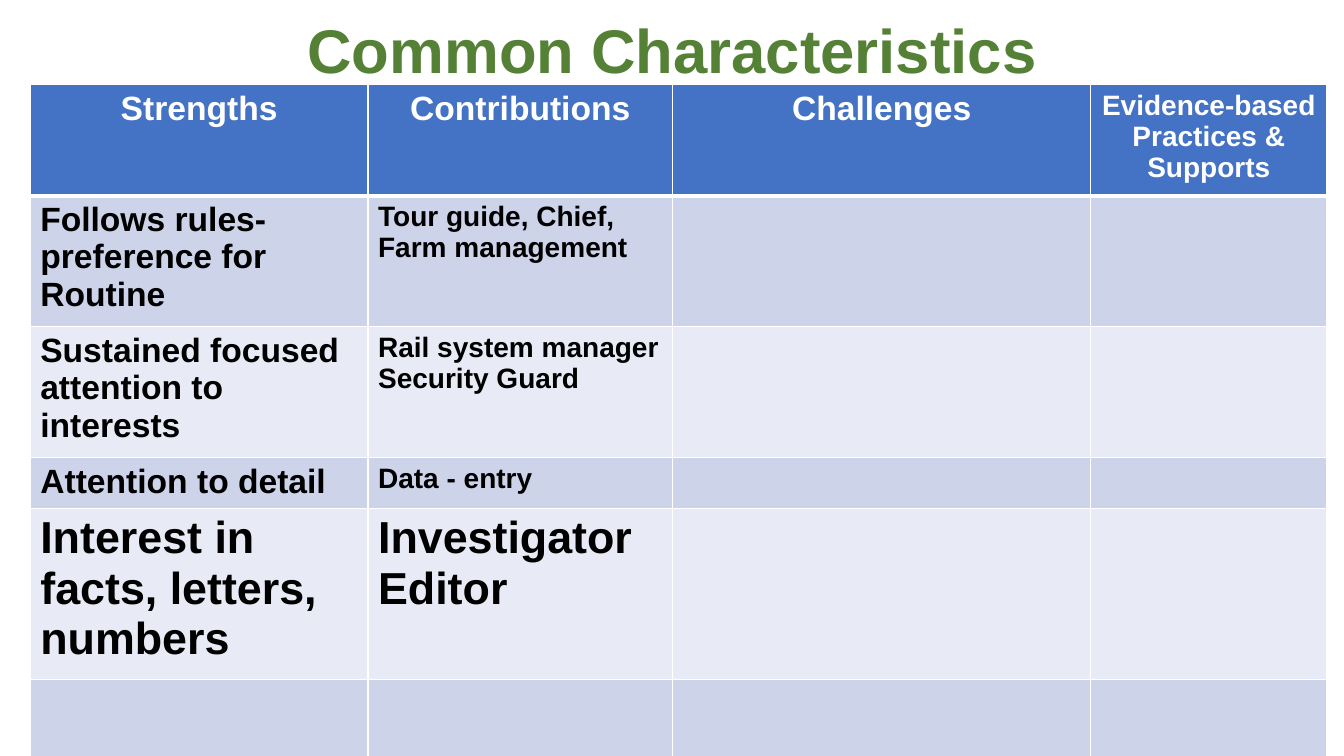
"""Build the Common Characteristics table slide."""
from lxml.etree import SubElement
from pptx import Presentation
from pptx.dml.color import RGBColor
from pptx.enum.text import MSO_ANCHOR, PP_ALIGN
from pptx.oxml.ns import qn
from pptx.util import Inches, Pt

TITLE = "Common Characteristics"
ROWS = [
    ("Strengths", "Contributions", "Challenges", "Evidence-based Practices & Supports"),
    ("Follows rules- preference for Routine", "Tour guide, Chief, Farm management", "", ""),
    ("Sustained focused attention to interests", "Rail system manager\nSecurity Guard", "", ""),
    ("Attention to detail", "Data - entry", "", ""),
    ("Interest in facts, letters, numbers", "Investigator\nEditor", "", ""),
    ("", "", "", ""),
    ("", "", "", ""),
]
SIZES = [(24, 24, 24, 20)] + [(24, 20, 20, 20)] * 3 + [(32, 32, 32, 32)] + [(18, 18, 18, 18)] * 2
COLUMN_WIDTHS = [3.35, 3.02, 4.15, 2.34]
ROW_HEIGHTS = [1.05, 0.86, 0.86, 0.48, 1.11, 1.18, 0.85]
COLORS = {
    "title": "548135",
    "header": "4472C4",
    "odd": "CDD4EA",
    "even": "E8EBF5",
    "white": "FFFFFF",
    "black": "000000",
}
FONT = "Arial"


def color(name):
    """Return the named colour."""
    return RGBColor.from_string(COLORS[name])


def format_text(text_frame, size, color_name, alignment):
    """Apply one bold style to every paragraph."""
    for paragraph in text_frame.paragraphs:
        paragraph.alignment = alignment
        for run in paragraph.runs:
            run.font.name = FONT
            run.font.size = Pt(size)
            run.font.bold = True
            run.font.color.rgb = color(color_name)


def add_borders(cell, row):
    """Draw white cell borders, thicker below the header."""
    widths = {"lnL": 1, "lnR": 1, "lnT": 3 if row == 1 else 1, "lnB": 3 if row == 0 else 1}
    properties = cell._tc.get_or_add_tcPr()
    for side, width in widths.items():
        line = SubElement(properties, qn(f"a:{side}"), w=str(Pt(width)))
        fill = SubElement(line, qn("a:solidFill"))
        SubElement(fill, qn("a:srgbClr"), val=COLORS["white"])


def add_title(slide):
    """Add the centred heading."""
    box = slide.shapes.add_textbox(Inches(0.92), 0, Inches(11.5), Inches(1.07))
    text_frame = box.text_frame
    text_frame.word_wrap = True
    text_frame.vertical_anchor = MSO_ANCHOR.MIDDLE
    text_frame.text = TITLE
    text_frame.paragraphs[0].line_spacing = 0.9
    format_text(text_frame, 44, "title", PP_ALIGN.CENTER)


def add_characteristics(slide):
    """Add the characteristics table."""
    table = slide.shapes.add_table(
        len(ROWS), len(COLUMN_WIDTHS), Inches(0.3), Inches(0.84),
        Inches(sum(COLUMN_WIDTHS)), Inches(sum(ROW_HEIGHTS)),
    ).table
    for column, width in zip(table.columns, COLUMN_WIDTHS):
        column.width = Inches(width)
    for table_row, height in zip(table.rows, ROW_HEIGHTS):
        table_row.height = Inches(height)
    for row, texts in enumerate(ROWS):
        fill_name = "header" if row == 0 else ("even", "odd")[row % 2]
        text_color = "white" if row == 0 else "black"
        alignment = PP_ALIGN.CENTER if row == 0 else PP_ALIGN.LEFT
        for column, text in enumerate(texts):
            cell = table.cell(row, column)
            add_borders(cell, row)
            cell.fill.solid()
            cell.fill.fore_color.rgb = color(fill_name)
            cell.text_frame.text = text
            format_text(cell.text_frame, SIZES[row][column], text_color, alignment)


def main():
    """Create and save the presentation."""
    presentation = Presentation()
    presentation.slide_width = Inches(13.33)
    presentation.slide_height = Inches(7.5)
    slide = presentation.slides.add_slide(presentation.slide_layouts[6])
    add_title(slide)
    add_characteristics(slide)
    presentation.save("out.pptx")


if __name__ == "__main__":
    main()
